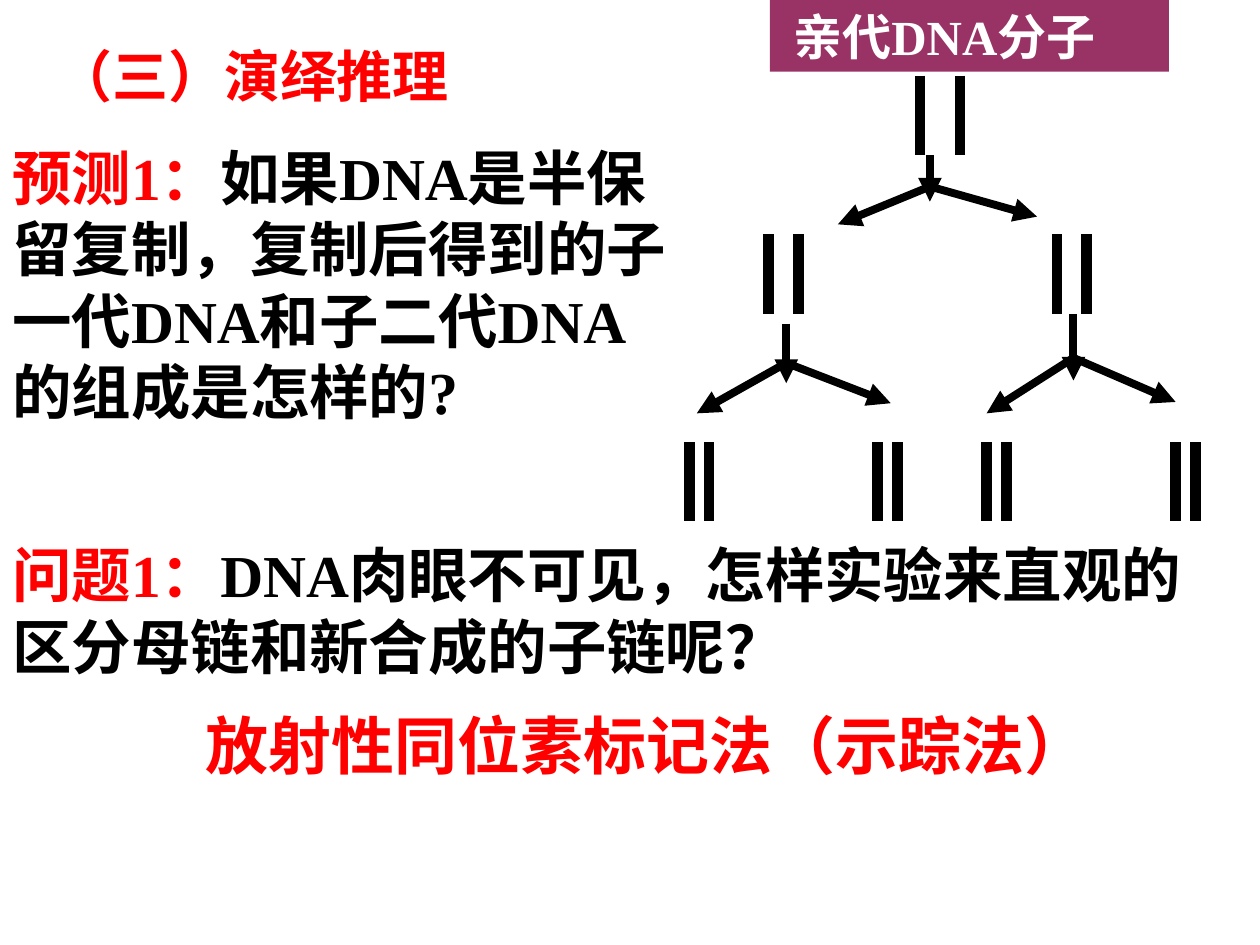
from dataclasses import dataclass

from lxml.etree import SubElement
from pptx import Presentation
from pptx.dml.color import RGBColor
from pptx.enum.shapes import MSO_CONNECTOR, MSO_SHAPE
from pptx.enum.text import MSO_ANCHOR, PP_ALIGN
from pptx.oxml.ns import qn
from pptx.util import Pt


@dataclass(frozen=True)
class Theme:
    red: str = "FF0000"
    black: str = "000000"
    white: str = "FFFFFF"
    plum: str = "993366"
    serif: str = "Times New Roman"
    sans: str = "Noto Sans CJK SC"
    label: int = 28
    heading: int = 32
    body: int = 34
    answer: int = 36
    strand: float = 6
    arrow: float = 4.5


T = Theme()
STRAND_HEIGHT = 45.3

# Each generation: top of the strands, gap within a pair, centres of the pairs
GENERATIONS = [
    (43.2, 23, [537.1]),
    (134, 17, [447.8, 612.4]),
    (252.7, 11.3, [399.6, 507.2, 569.5, 677.5]),
]

# Each fork: stem x, stem top, stem bottom, branching y, left tip, right tip
FORKS = [
    (531.4, 88.6, 115.2, 106.6, (478.8, 128.2), (592.6, 123.8)),
    (449.3, 185, 218.9, 207.4, (398.2, 236.2), (509, 230.4)),
    (613.4, 179.3, 217.4, 204.5, (563.8, 236.2), (671.8, 229.7)),
]


def add_text(s, runs, left, top, width, height, size, fill=None,
             anchor=MSO_ANCHOR.TOP):
    """Add bold text; runs are (text, font, colour), on a fill if one is given."""
    box = [Pt(v) for v in (left, top, width, height)]
    if fill:
        sp = s.shapes.add_shape(MSO_SHAPE.RECTANGLE, *box)
        sp.shadow.inherit = False
        sp.fill.solid()
        sp.fill.fore_color.rgb = RGBColor.from_string(fill)
        sp.line.fill.background()
    else:
        sp = s.shapes.add_textbox(*box)
    tf = sp.text_frame
    tf.word_wrap = True
    tf.vertical_anchor = anchor
    p = tf.paragraphs[0]
    p.alignment = PP_ALIGN.LEFT
    for text, font, color in runs:
        r = p.add_run()
        r.text = text
        r.font.size = Pt(size)
        r.font.bold = True
        r.font.color.rgb = RGBColor.from_string(color)
        r.font.name = font
        SubElement(r.font._element, qn("a:ea"), typeface=T.sans)


def add_line(s, start, end, width, arrow=False):
    ends = [Pt(v) for v in (*start, *end)]
    sp = s.shapes.add_connector(MSO_CONNECTOR.STRAIGHT, *ends)
    sp.line.width = Pt(width)
    sp.line.color.rgb = RGBColor.from_string(T.black)
    if arrow:
        SubElement(sp.line._get_or_add_ln(), qn("a:tailEnd"), type="triangle")
    SubElement(sp._element.spPr, qn("a:effectLst"))


def add_dna(s, center, top, gap):
    for x in (center - gap / 2, center + gap / 2):
        add_line(s, (x, top), (x, top + STRAND_HEIGHT), T.strand)


def add_fork(s, x, top, bottom, branch, left_tip, right_tip):
    add_line(s, (x, top), (x, bottom), T.arrow, arrow=True)
    for tip in (left_tip, right_tip):
        add_line(s, (x, branch), tip, T.arrow, arrow=True)


def main():
    prs = Presentation()
    prs.slide_width, prs.slide_height = Pt(720), Pt(540)
    s = prs.slides.add_slide(prs.slide_layouts[6])

    # Question and prediction
    add_text(s, [("问题1：", T.serif, T.red),
                 ("DNA肉眼不可见，怎样实验来直观的区分母链和新合成的子链呢？",
                  T.serif, T.black)],
             0, 303.8, 700.6, 89.3, T.body, fill=T.white,
             anchor=MSO_ANCHOR.MIDDLE)
    add_text(s, [("预测1：", T.serif, T.red),
                 ("如果DNA是半保留复制，复制后得到的子一代DNA和子二代DNA的组成是怎样的?",
                  T.serif, T.black)],
             0, 77, 388, 170.6, T.body, fill=T.white)

    # Replication tree
    for top, gap, centers in GENERATIONS:
        for center in centers:
            add_dna(s, center, top, gap)
    for fork in FORKS:
        add_fork(s, *fork)
    add_text(s, [(" 亲代", T.sans, T.white), ("DNA", T.serif, T.white),
                 ("分子", T.sans, T.white)],
             440, 0, 228, 41, T.label, fill=T.plum)

    # Answer and heading
    add_text(s, [("放射性同位素标记法（示踪法）", T.sans, T.red)],
             110.2, 400.3, 652.3, 51, T.answer)
    add_text(s, [("（三）", T.serif, T.red), ("演绎推理", T.sans, T.red)],
             25.2, 20.2, 260.6, 45.4, T.heading)

    prs.save("out.pptx")


if __name__ == "__main__":
    main()
